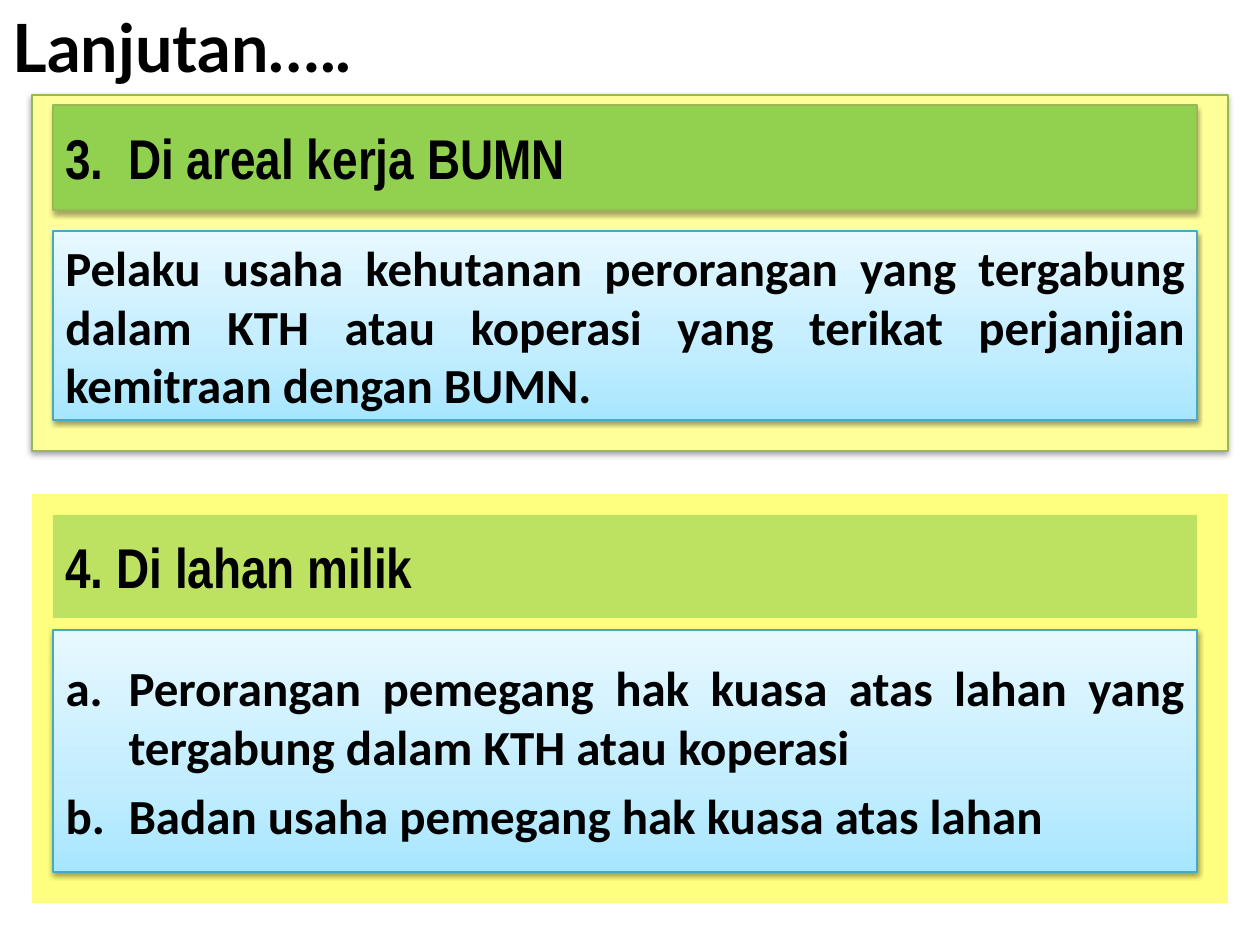
from lxml.etree import SubElement
from pptx import Presentation
from pptx.dml.color import RGBColor
from pptx.enum.shapes import MSO_SHAPE
from pptx.enum.text import MSO_ANCHOR, MSO_AUTO_SIZE, PP_ALIGN
from pptx.oxml.ns import qn
from pptx.util import Emu, Pt

EMU_PER_PX = 914400 / 126
GRADIENT = [(0, "A7E6FF"), (35, "C1EDFF"), (100, "E7F8FF")]
INDENT = 63


def px(length):
    return Emu(round(length * EMU_PER_PX))


def color(hex_string):
    return RGBColor.from_string(hex_string)


def add_color(parent, hex_string, alpha=100):
    node = SubElement(parent, qn("a:srgbClr"), val=hex_string)
    if alpha < 100:
        SubElement(node, qn("a:alpha"), val=str(alpha * 1000))


class SlideBuilder:
    """Style and current slide, with one method per kind of element."""
    ink = "000000"
    heading_font, body_font, title_font = "Arial Narrow", "Calibri", "Lato"

    def __init__(self, slide):
        self.slide = slide

    def place(self, shape, box):
        shape.left, shape.top, shape.width, shape.height = map(px, box)

    def outline(self, shape, hex_string=None):
        if hex_string:
            shape.line.color.rgb = color(hex_string)
            shape.line.width = Pt(0.75)
        else:
            shape.line.fill.background()

    def shadow(self, shape, alpha=38, distance=1.6):
        shape.shadow.inherit = False
        effects = shape._element.spPr.find(qn("a:effectLst"))
        outer = SubElement(effects, qn("a:outerShdw"), blurRad=str(Pt(3.1)),
                           dist=str(Pt(distance)), dir="5400000", rotWithShape="0")
        add_color(outer, self.ink, alpha)

    def gradient(self, shape):
        shape.fill.gradient()
        shape.fill.gradient_angle = 90
        stops = shape._element.spPr.find(".//" + qn("a:gsLst"))
        for stop in list(stops):
            stops.remove(stop)
        for position, hex_string in GRADIENT:
            add_color(SubElement(stops, qn("a:gs"), pos=str(position * 1000)), hex_string)

    def set_text(self, shape, lines, font, size, align, anchor, hanging=False, numbered=False):
        frame = shape.text_frame
        frame.word_wrap = True
        frame.auto_size = MSO_AUTO_SIZE.NONE
        frame.vertical_anchor = anchor
        frame.text = "\n".join(lines)
        for index, paragraph in enumerate(frame.paragraphs, start=1):
            paragraph.alignment = align
            paragraph.space_before = Pt(0)
            properties = paragraph._p.get_or_add_pPr()
            if hanging or numbered:
                properties.set("marL", str(px(INDENT)))
                properties.set("indent", str(-px(INDENT)))
            if numbered:
                if index < len(lines):
                    paragraph.space_after = Pt(6)
                SubElement(properties, qn("a:buFont"), typeface="+mj-lt")
                SubElement(properties, qn("a:buAutoNum"), type="alphaLcPeriod")
            paragraph.font.name = font
            paragraph.font.size = Pt(size)
            paragraph.font.bold = True
            paragraph.font.color.rgb = color(self.ink)

    def title(self, text, box):
        title = self.slide.shapes.title
        self.place(title, box)
        title.fill.solid()
        title.fill.fore_color.rgb = color("FFFFFF")
        self.set_text(title, [text], self.title_font, 38, PP_ALIGN.LEFT, MSO_ANCHOR.TOP)

    def rectangle(self, box, fill, alpha=100, line=None):
        shape = self.slide.shapes.add_shape(MSO_SHAPE.RECTANGLE, *map(px, box))
        shape.shadow.inherit = False
        shape.fill.solid()
        shape.fill.fore_color.rgb = color(fill)
        if alpha < 100:
            node = shape._element.spPr.find(".//" + qn("a:srgbClr"))
            SubElement(node, qn("a:alpha"), val=str(alpha * 1000))
        self.outline(shape, line)
        return shape

    def heading(self, text, box, alpha=100, line=None, hanging=False):
        heading = self.rectangle(box, "92D050", alpha, line)
        self.set_text(heading, [text], self.heading_font, 32, PP_ALIGN.LEFT,
                      MSO_ANCHOR.MIDDLE, hanging)
        return heading

    def card(self, shape, lines, anchor, numbered=False):
        self.gradient(shape)
        self.outline(shape, "46AAC5")
        self.shadow(shape)
        self.set_text(shape, lines, self.body_font, 28, PP_ALIGN.JUSTIFY, anchor,
                      numbered=numbered)

    def text_card(self, text, box):
        self.card(self.rectangle(box, "FFFFFF"), [text], MSO_ANCHOR.TOP)

    def list_card(self, items, box):
        body = self.slide.placeholders[1]
        self.slide.shapes._spTree.append(body._element)  # bring to front
        self.place(body, box)
        self.card(body, items, MSO_ANCHOR.MIDDLE, numbered=True)


def main():
    deck = Presentation()
    deck.slide_width, deck.slide_height = px(1260), px(945)
    builder = SlideBuilder(deck.slides.add_slide(deck.slide_layouts[1]))
    panel_left, panel_width = 32, 1196
    left, width = 53, 1144

    builder.title("Lanjutan…..", (0, 0, 1260, 84))

    # Section 3: state enterprise areas
    state_panel = builder.rectangle((panel_left, 95, panel_width, 356), "FFFF99", line="98B955")
    builder.shadow(state_panel)
    state_heading = builder.heading("3.\tDi areal kerja BUMN", (left, 105, width, 105),
                                    line="98B955", hanging=True)
    builder.shadow(state_heading, alpha=35, distance=1.8)
    builder.text_card("Pelaku usaha kehutanan perorangan yang tergabung dalam KTH atau "
                      "koperasi yang terikat perjanjian kemitraan dengan BUMN.",
                      (left, 231, width, 189))

    # Section 4: privately owned land
    builder.rectangle((panel_left, 494, panel_width, 409), "FFFF00", alpha=50)
    builder.heading("4. Di lahan milik", (left, 515, width, 103), alpha=60)
    builder.list_card(["Perorangan pemegang hak kuasa atas lahan yang tergabung dalam KTH "
                       "atau koperasi",
                       "Badan usaha pemegang hak kuasa atas lahan"],
                      (left, 630, width, 242))

    deck.save("out.pptx")


if __name__ == "__main__":
    main()
